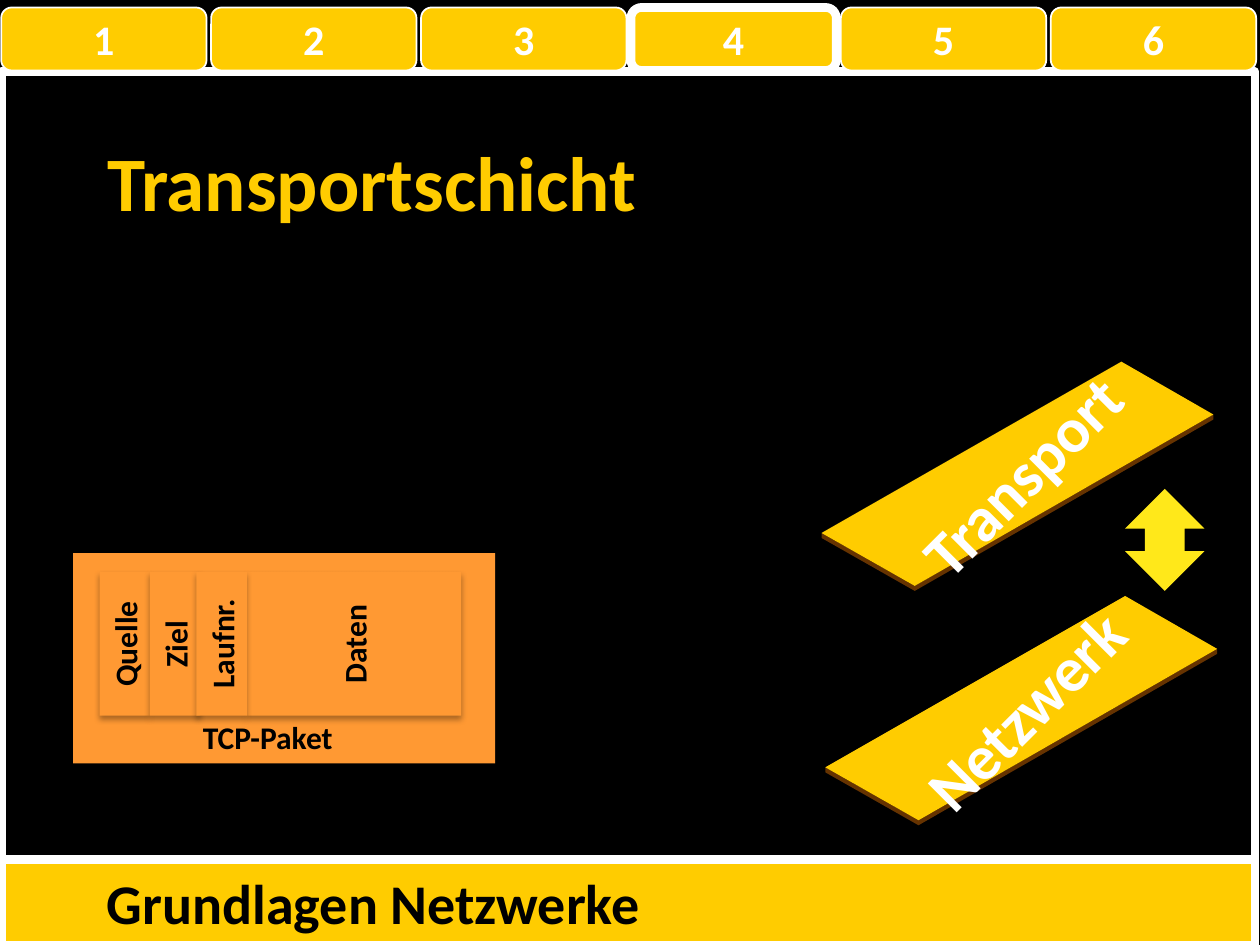
from dataclasses import dataclass

from lxml.etree import SubElement
from pptx import Presentation
from pptx.dml.color import RGBColor
from pptx.enum.shapes import MSO_SHAPE
from pptx.enum.text import MSO_ANCHOR, MSO_AUTO_SIZE, PP_ALIGN
from pptx.oxml.ns import qn
from pptx.util import Inches, Pt

COLORS = {
    "black": "000000",
    "white": "FFFFFF",
    "gold": "FFCC00",
    "orange": "FF9933",
    "edge": "663300",
    "arrow": "FFE81A",
}
FONT = "Calibri"


@dataclass
class Box:
    left: float
    top: float
    width: float
    height: float

    def lengths(self):
        return [Inches(n) for n in (self.left, self.top, self.width, self.height)]


@dataclass
class Field:
    """One upright field of the packet."""
    text: str
    left: float
    width: float


@dataclass
class Layer:
    """One tilted slab of the network stack, shifted from the first."""
    text: str
    dx: float
    dy: float


FIELDS = [
    Field("Quelle", 0.79, 0.4),
    Field("Ziel", 1.19, 0.4),
    Field("Daten", 1.96, 1.7),
    Field("Laufnr.", 1.56, 0.4),
]
FIELD_TOP, FIELD_HEIGHT = 4.54, 1.14
LAYERS = [Layer("Transport", 0, 0), Layer("Netzwerk", 0.03, 1.86)]
SLAB = [(6.52, 4.23), (8.9, 2.87), (9.63, 3.29), (7.26, 4.65)]
SLAB_DEPTH = 0.04
TAB_COUNT, TAB_ACTIVE, TAB_STEP = 6, 4, 1.666


def rgb(name: str) -> RGBColor:
    return RGBColor.from_string(COLORS[name])


def paint(shape, fill: str | None, line: str | None = None, weight: float = 1) -> None:
    shape.shadow.inherit = False
    if fill:
        shape.fill.solid()
        shape.fill.fore_color.rgb = rgb(fill)
    else:
        shape.fill.background()
    if line:
        shape.line.color.rgb = rgb(line)
        shape.line.width = Pt(weight)
    else:
        shape.line.fill.background()


def write(shape, text: str, size: float, color: str,
          align=PP_ALIGN.CENTER, wrap: bool = False) -> None:
    frame = shape.text_frame
    frame.text = text
    frame.word_wrap = wrap
    frame.auto_size = MSO_AUTO_SIZE.NONE
    frame.vertical_anchor = MSO_ANCHOR.MIDDLE
    para = frame.paragraphs[0]
    para.alignment = align
    para.font.name = FONT
    para.font.size = Pt(size)
    para.font.bold = True
    para.font.color.rgb = rgb(color)


def add_block(page, kind, box: Box, fill: str | None,
              line: str | None = None, weight: float = 1):
    shape = page.shapes.add_shape(kind, *box.lengths())
    paint(shape, fill, line, weight)
    return shape


def add_label(page, box: Box, text: str, size: float, color: str, align=PP_ALIGN.CENTER):
    label = page.shapes.add_textbox(*box.lengths())
    write(label, text, size, color, align)
    return label


def drop_shadow(shape) -> None:
    effects = shape._element.spPr.find(qn("a:effectLst"))
    shadow = SubElement(effects, qn("a:outerShdw"), blurRad=str(Pt(3.5)),
                        dist=str(Pt(2.2)), dir="5400000", rotWithShape="0")
    color = SubElement(shadow, qn("a:srgbClr"), val=COLORS["black"])
    SubElement(color, qn("a:alpha"), val="32000")


def add_field(page, field: Field) -> None:
    """Draw a field turned to read upwards, so its sides are swapped."""
    box = Box(field.left + (field.width - FIELD_HEIGHT) / 2,
              FIELD_TOP + (FIELD_HEIGHT - field.width) / 2,
              FIELD_HEIGHT, field.width)
    shape = add_block(page, MSO_SHAPE.RECTANGLE, box, "orange")
    shape.rotation = 270
    drop_shadow(shape)
    write(shape, field.text, 18, "black")


def add_packet(page) -> None:
    packet = add_block(page, MSO_SHAPE.RECTANGLE, Box(0.58, 4.39, 3.35, 1.67), "orange")
    drop_shadow(packet)
    for field in FIELDS:
        add_field(page, field)
    add_label(page, Box(1.26, 5.65, 1.73, 0.4), "TCP-Paket", 18, "black")


def add_polygon(page, points: list[tuple[float, float]], fill: str) -> None:
    corners = [(Inches(x), Inches(y)) for x, y in points]
    builder = page.shapes.build_freeform(*corners[0])
    builder.add_line_segments(corners[1:], close=True)
    paint(builder.convert_to_shape(), fill)


def add_layer(page, layer: Layer) -> None:
    top = [(x + layer.dx, y + layer.dy) for x, y in SLAB]
    left, _, right, front = top
    lower = [(x, y + SLAB_DEPTH) for x, y in (right, front, left)]
    add_polygon(page, [left, front, right, *lower], "edge")
    add_polygon(page, top, "gold")
    label = add_label(page, Box(6.43 + layer.dx, 3.25 + layer.dy, 3.35, 1.04),
                      layer.text, 36, "white")
    label.rotation = 315


def add_tab(page, number: int) -> None:
    box = Box(0.01 + (number - 1) * TAB_STEP, 0.06, 1.63, 0.5)
    weight = 5 if number == TAB_ACTIVE else 1
    tab = add_block(page, MSO_SHAPE.ROUNDED_RECTANGLE, box, "gold", "white", weight)
    write(tab, str(number), 24, "white")


def main() -> None:
    deck = Presentation()
    deck.slide_width, deck.slide_height = Inches(10), Inches(7.5)
    page = deck.slides.add_slide(deck.slide_layouts[5])
    page.background.fill.solid()
    page.background.fill.fore_color.rgb = rgb("black")

    title = page.shapes.title
    title.left, title.top, title.width, title.height = Box(0.75, 0.82, 8.5, 1.23).lengths()
    write(title, "Transportschicht", 44, "gold", PP_ALIGN.LEFT, wrap=True)

    add_packet(page)
    add_block(page, MSO_SHAPE.RECTANGLE, Box(0.01, 6.82, 9.95, 0.68), "gold", "white", 5)
    add_block(page, MSO_SHAPE.RECTANGLE, Box(0.01, 0.57, 9.95, 6.25), None, "white", 5)
    add_label(page, Box(0.75, 6.82, 8.5, 0.68), "Grundlagen Netzwerke", 32, "black",
              PP_ALIGN.LEFT)

    for layer in LAYERS:
        add_layer(page, layer)
    add_block(page, MSO_SHAPE.UP_DOWN_ARROW, Box(8.93, 3.88, 0.63, 0.81), "arrow")

    for number in range(1, TAB_COUNT + 1):
        add_tab(page, number)

    deck.save("out.pptx")


if __name__ == "__main__":
    main()
